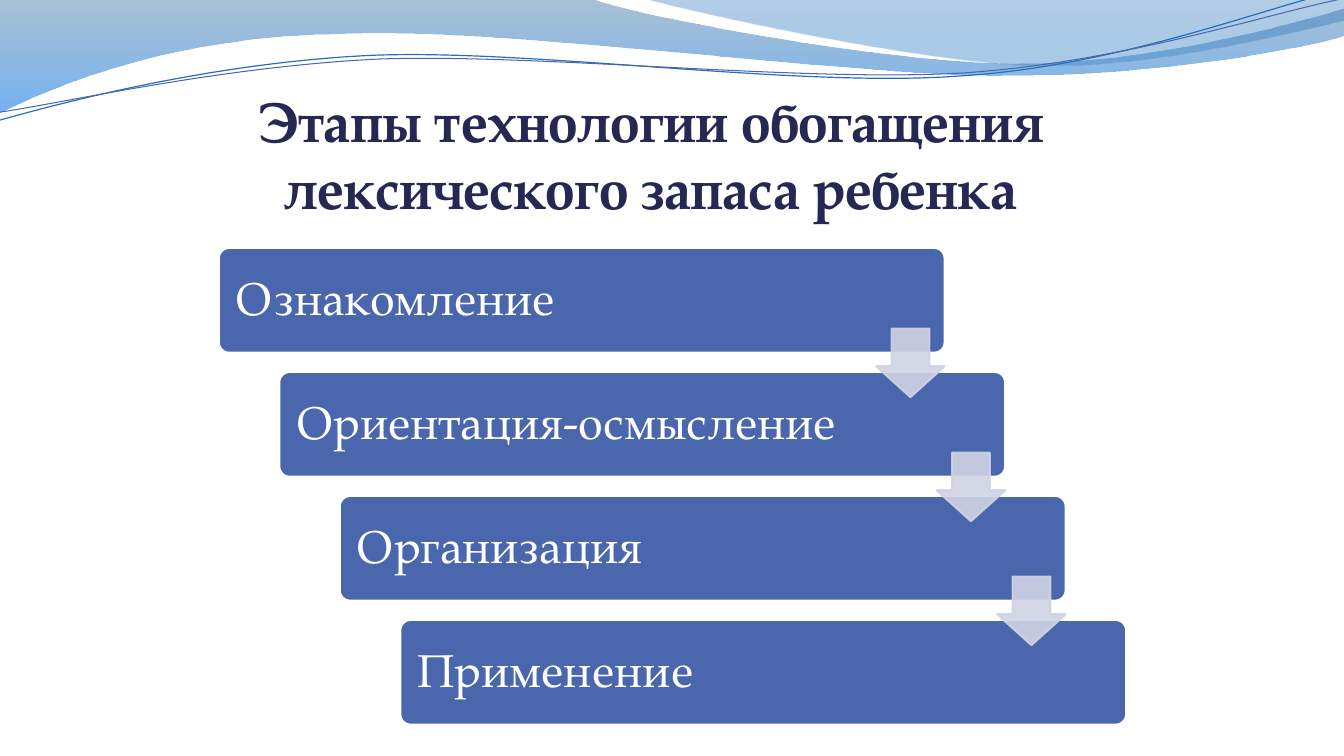
"""Build a slide showing four stages of vocabulary enrichment as a descending staircase."""
from lxml import etree
from pptx import Presentation
from pptx.dml.color import RGBColor
from pptx.enum import shapes, text
from pptx.oxml import ns
from pptx.util import Inches, Pt

FONT = "TeX Gyre Pagella"
BLUE, NAVY, WHITE, PALE = "4A66AC", "242852", "FFFFFF", "D0D3E3"


def color(value):
    return RGBColor.from_string(value)


def add_wave(slide, segments, closed):
    """Draw an outline whose segments are points (2 numbers) or cubic curves (6 numbers)."""
    points = [(Inches(segment[i]), Inches(segment[i + 1]))
              for segment in segments for i in range(0, len(segment), 2)]
    builder = slide.shapes.build_freeform(*points[0])
    builder.add_line_segments(points[1:], close=closed)
    wave = builder.convert_to_shape()
    wave.shadow.inherit = False
    nodes = iter(list(wave.element.spPr.iter(ns.qn("a:lnTo"))))
    for segment in segments[1:]:
        node = next(nodes)
        if len(segment) == 6:
            curve = etree.Element(ns.qn("a:cubicBezTo"))
            node.addprevious(curve)
            for corner in (node, next(nodes), next(nodes)):
                curve.append(corner[0])
                corner.getparent().remove(corner)
    return wave


presentation = Presentation()
presentation.slide_width = Inches(13.33)
presentation.slide_height = Inches(7.5)
slide = presentation.slides.add_slide(presentation.slide_layouts[5])

bands = [
    ([(0, 0), (5.87, -0.01), (6.34, 0.17, 8.84, 0.63, 10.11, 0.63),
      (11.37, 0.63, 12.77, 0.26, 13.33, 0.09), (13.34, 0.36),
      (13.11, 0.44, 11.59, 0.76, 9.94, 0.75), (8.29, 0.75, 5.09, 0.28, 3.43, 0.34),
      (1.72, 0.36, 0.61, 0.83, -0.02, 1.13)],
     [(0, "4075A3", 45), (100, "0073E7", 55)]),
    ([(6.38, -0.01), (6.79, 0.11, 9.09, 0.62, 10.25, 0.65),
      (11.4, 0.69, 12.82, 0.32, 13.33, 0.21), (13.33, 0)],
     [(0, "0B5EB1", 30), (80, "438CCC", 45)]),
]
for outline, stops in bands:
    band = add_wave(slide, outline, True)
    band.line.fill.background()
    band.fill.gradient()
    band.fill.gradient_angle = 270
    for stop, (position, shade, opacity) in zip(band.fill.gradient_stops, stops):
        stop.position = position / 100
        stop.color.rgb = color(shade)
    for node, (position, shade, opacity) in zip(
            band.element.spPr.iter(ns.qn("a:srgbClr")), stops):
        etree.SubElement(node, ns.qn("a:alpha"), val=str(opacity * 1000))

strands = [
    ([(-0.03, 0.88), (0.62, 0.73, 2.1, 0.41, 3.69, 0.41),
      (5.28, 0.42, 7.87, 0.93, 9.48, 0.89), (11.09, 0.87, 12.53, 0.36, 13.32, 0.22)],
     "2470BC", 0.85),
    ([(-0.03, 0.8), (0.61, 0.74, 2.18, 0.45, 3.77, 0.45),
      (5.37, 0.47, 7.95, 0.88, 9.54, 0.86), (11.13, 0.83, 12.56, 0.42, 13.35, 0.3)],
     BLUE, 0.75),
]
for outline, shade, width in strands:
    strand = add_wave(slide, outline, False)
    strand.rotation = 357.3
    strand.fill.background()
    strand.line.color.rgb = color(shade)
    strand.line.width = Pt(width)

title = slide.shapes.title
title.left, title.top = Inches(0.92), Inches(1.02)
title.width, title.height = Inches(11.08), Inches(1.17)
frame = title.text_frame
frame.text = "Этапы технологии обогащения лексического запаса ребенка"
frame.word_wrap = True
frame.auto_size = text.MSO_AUTO_SIZE.NONE
frame.vertical_anchor = text.MSO_ANCHOR.BOTTOM
frame.margin_left = frame.margin_right = frame.margin_bottom = 0
frame.margin_top = Inches(0.05)
paragraph = frame.paragraphs[0]
paragraph.alignment = text.PP_ALIGN.CENTER
font = paragraph.runs[0].font
font.name, font.size, font.bold = FONT, Pt(40), True
font.color.rgb = color(NAVY)

stages = ["Ознакомление", "Ориентация-осмысление", "Организация", "Применение"]
step_x, step_y = 0.6, 1.23
for index, stage in enumerate(stages):
    bar = slide.shapes.add_shape(
        shapes.MSO_SHAPE.ROUNDED_RECTANGLE,
        Inches(2.17 + index * step_x), Inches(2.46 + index * step_y),
        Inches(7.2), Inches(1.04))
    bar.adjustments[0] = 0.1
    bar.shadow.inherit = False
    bar.fill.solid()
    bar.fill.fore_color.rgb = color(BLUE)
    bar.line.color.rgb = color(WHITE)
    bar.line.width = Pt(1.5)
    frame = bar.text_frame
    frame.text = stage
    frame.word_wrap = True
    frame.vertical_anchor = text.MSO_ANCHOR.MIDDLE
    frame.margin_left = frame.margin_right = Inches(0.14)
    frame.margin_top = frame.margin_bottom = Inches(0.14)
    paragraph = frame.paragraphs[0]
    paragraph.alignment = text.PP_ALIGN.LEFT
    paragraph.line_spacing = 0.9
    font = paragraph.runs[0].font
    font.name, font.size = FONT, Pt(33)
    font.color.rgb = color(WHITE)

for index in range(len(stages) - 1):
    arrow = slide.shapes.add_shape(
        shapes.MSO_SHAPE.DOWN_ARROW,
        Inches(8.69 + index * step_x), Inches(3.26 + index * step_y),
        Inches(0.68), Inches(0.68))
    arrow.adjustments[0], arrow.adjustments[1] = 0.55, 0.45
    arrow.shadow.inherit = False
    arrow.fill.solid()
    arrow.fill.fore_color.rgb = color(PALE)
    arrow.line.color.rgb = color(PALE)
    arrow.line.width = Pt(1.5)
    for node in arrow.element.spPr.iter(ns.qn("a:srgbClr")):
        etree.SubElement(node, ns.qn("a:alpha"), val="90000")

presentation.save("out.pptx")
